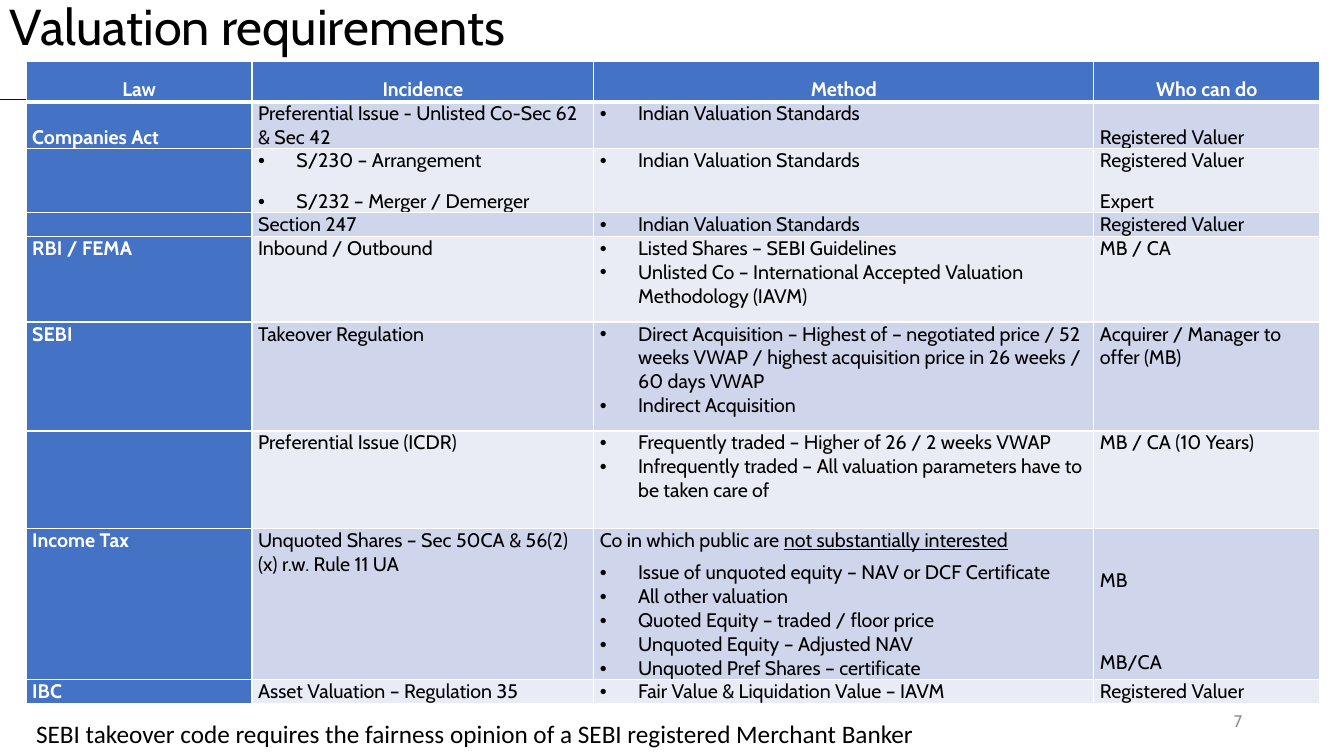
import pptx
import pptx.dml.color
import pptx.enum.shapes
import pptx.enum.text
import pptx.oxml.ns
import pptx.util
from lxml import etree

Inches = pptx.util.Inches
Pt = pptx.util.Pt
qn = pptx.oxml.ns.qn
RGBColor = pptx.dml.color.RGBColor
ALIGN = pptx.enum.text.PP_ALIGN
ANCHOR = pptx.enum.text.MSO_ANCHOR

BLACK = RGBColor(0x00, 0x00, 0x00)
WHITE = RGBColor(0xFF, 0xFF, 0xFF)
NAVY = RGBColor(0x00, 0x00, 0x85)
GREY = RGBColor(0x8C, 0x8C, 0x8C)
BLUE = RGBColor(0x44, 0x72, 0xC4)
DARK_BAND = RGBColor(0xCF, 0xD5, 0xEA)
LIGHT_BAND = RGBColor(0xE9, 0xEB, 0xF5)

COLUMN_WIDTHS = [2.24, 3.39, 4.96, 2.24]
ROW_HEIGHTS = [0.4, 0.44, 0.63, 0.22, 0.85, 1.08, 0.97, 1.5, 0.24]
LAW, INCIDENCE, METHOD, WHO = range(4)
COMPANIES_ACT_ROW, INCOME_TAX_ROW = 1, 7

REQUIREMENTS = [
    [["Law"], ["Incidence"], ["Method"], ["Who can do"]],
    [["Companies Act"], ["Preferential Issue - Unlisted Co-Sec 62 & Sec 42"],
     ["•Indian Valuation Standards"], ["Registered Valuer"]],
    [[], ["•S/230 – Arrangement", "•S/232 – Merger / Demerger"],
     ["•Indian Valuation Standards"], ["Registered Valuer", "Expert"]],
    [[], ["Section 247"], ["•Indian Valuation Standards"], ["Registered Valuer"]],
    [["RBI / FEMA"], ["Inbound / Outbound"],
     ["•Listed Shares – SEBI Guidelines",
      "•Unlisted Co – International Accepted Valuation Methodology (IAVM)"],
     ["MB / CA"]],
    [["SEBI"], ["Takeover Regulation"],
     ["•Direct Acquisition – Highest of – negotiated price / 52 weeks VWAP / "
      "highest acquisition price in 26 weeks / 60 days VWAP",
      "•Indirect Acquisition"],
     ["Acquirer / Manager to offer (MB)"]],
    [[], ["Preferential Issue (ICDR)"],
     ["•Frequently traded – Higher of 26 / 2 weeks VWAP",
      "•Infrequently traded – All valuation parameters have to be taken care of"],
     ["MB / CA (10 Years)"]],
    [["Income Tax"], ["Unquoted Shares – Sec 50CA & 56(2)(x) r.w. Rule 11 UA"],
     ["Co in which public are _not substantially interested",
      "•Issue of unquoted equity – NAV or DCF Certificate",
      "•All other valuation",
      "•Quoted Equity – traded / floor price",
      "•Unquoted Equity – Adjusted NAV",
      "•Unquoted Pref Shares – certificate"],
     ["MB", "MB/CA"]],
    [["IBC"], ["Asset Valuation – Regulation 35"],
     ["•Fair Value & Liquidation Value – IAVM"], ["Registered Valuer"]],
]


def style_run(run, size, color, font="Cabin", bold=False):
    """Give a run its font, size, weight and colour."""
    run.font.name = font
    run.font.size = Pt(size)
    run.font.bold = bold
    run.font.color.rgb = color


def add_label(slide, box, text, size, color, font="Cabin",
              align=ALIGN.LEFT, anchor=ANCHOR.MIDDLE):
    """Place one line of text in a box and return its paragraph."""
    frame = slide.shapes.add_textbox(*map(Inches, box)).text_frame
    frame.word_wrap = True
    frame.vertical_anchor = anchor
    frame.text = text
    paragraph = frame.paragraphs[0]
    paragraph.alignment = align
    style_run(paragraph.runs[0], size, color, font)
    return paragraph


def add_rule(slide, left, top, width):
    """Draw the thin rule that runs behind the table."""
    rule = slide.shapes.add_connector(
        pptx.enum.shapes.MSO_CONNECTOR.STRAIGHT,
        Inches(left), Inches(top), Inches(left + width), Inches(top))
    rule.line.color.rgb = NAVY
    rule.line.width = Pt(0.5)
    etree.SubElement(rule._element.spPr, qn("a:effectLst"))


def set_borders(cell, bottom_width):
    """Outline a cell in white, with its own bottom width in points."""
    properties = cell._tc.get_or_add_tcPr()
    for position, side in enumerate(("lnL", "lnR", "lnT", "lnB")):
        width = bottom_width if side == "lnB" else 1
        border = etree.Element(qn(f"a:{side}"), w=str(Pt(width)))
        fill = etree.SubElement(border, qn("a:solidFill"))
        etree.SubElement(fill, qn("a:srgbClr"), val=str(WHITE))
        properties.insert(position, border)


def set_bullet(paragraph):
    """Give a paragraph a hanging round bullet."""
    properties = paragraph._p.get_or_add_pPr()
    properties.set("marL", str(Inches(0.38)))
    properties.set("indent", str(-Inches(0.38)))
    etree.SubElement(properties, qn("a:buFont"), typeface="Arial")
    etree.SubElement(properties, qn("a:buChar"), char="•")


def fill_cell(cell, lines, row, column):
    """Write the lines of one cell and style it by its row and column."""
    heading = row == 0 or column == LAW
    cell.fill.solid()
    cell.fill.fore_color.rgb = BLUE if heading else (DARK_BAND if row % 2 else LIGHT_BAND)
    set_borders(cell, 3 if row == 0 else 1)
    cell.margin_left = cell.margin_right = Inches(0.06)
    cell.margin_top = cell.margin_bottom = 0
    low = row == 0 or (row == COMPANIES_ACT_ROW and column != METHOD)
    cell.vertical_anchor = ANCHOR.BOTTOM if low else ANCHOR.TOP
    if not lines:
        etree.SubElement(cell.text_frame.paragraphs[0]._p, qn("a:endParaRPr"), sz="1400")
    for index, line in enumerate(lines):
        paragraph = cell.text_frame.add_paragraph() if index else cell.text_frame.paragraphs[0]
        bulleted = line.startswith("•")
        if not bulleted or column == INCIDENCE:
            paragraph.space_before = Pt(6 if index else 0)
            paragraph.space_after = Pt(6)
        if bulleted:
            set_bullet(paragraph)
        paragraph.alignment = ALIGN.CENTER if row == 0 else ALIGN.LEFT
        for part, text in enumerate(line.lstrip("•").split("_")):
            run = paragraph.add_run()
            run.text = text
            style_run(run, 14, WHITE if heading else BLACK, bold=heading)
            run.font.underline = part == 1


def add_requirements(slide, left, top):
    """Build the table of valuation requirements from its top left corner."""
    table = slide.shapes.add_table(
        len(ROW_HEIGHTS), len(COLUMN_WIDTHS), Inches(left), Inches(top),
        Inches(sum(COLUMN_WIDTHS)), Inches(sum(ROW_HEIGHTS))).table
    for column, width in zip(table.columns, COLUMN_WIDTHS):
        column.width = Inches(width)
    for row, height in zip(table.rows, ROW_HEIGHTS):
        row.height = Inches(height)
    for row, requirement in enumerate(REQUIREMENTS):
        for column, lines in enumerate(requirement):
            fill_cell(table.cell(row, column), lines, row, column)
    income_tax_valuers = table.cell(INCOME_TAX_ROW, WHO)
    income_tax_valuers.margin_top = Inches(0.4)
    income_tax_valuers.text_frame.paragraphs[1].space_before = Pt(35)


def build_slide(presentation):
    """Lay out the valuation requirements slide."""
    slide = presentation.slides.add_slide(presentation.slide_layouts[6])
    add_rule(slide, 0, 0.99, 13.08)
    title = add_label(slide, (0, 0.02, 11.5, 0.53), "Valuation requirements", 36, BLACK)
    title.line_spacing = 0.9
    add_requirements(slide, 0.26, 0.61)
    add_label(slide, (9.42, 6.95, 3, 0.4), "7", 12, GREY, align=ALIGN.RIGHT)
    add_label(slide, (0.26, 7.08, 10.59, 0.4),
              "SEBI takeover code requires the fairness opinion of a SEBI registered "
              "Merchant Banker", 18, BLACK, "Calibri", anchor=ANCHOR.TOP)


def main():
    """Create the presentation and save it."""
    presentation = pptx.Presentation()
    presentation.slide_width = Inches(13.33)
    presentation.slide_height = Inches(7.5)
    build_slide(presentation)
    presentation.save("out.pptx")


if __name__ == "__main__":
    main()
